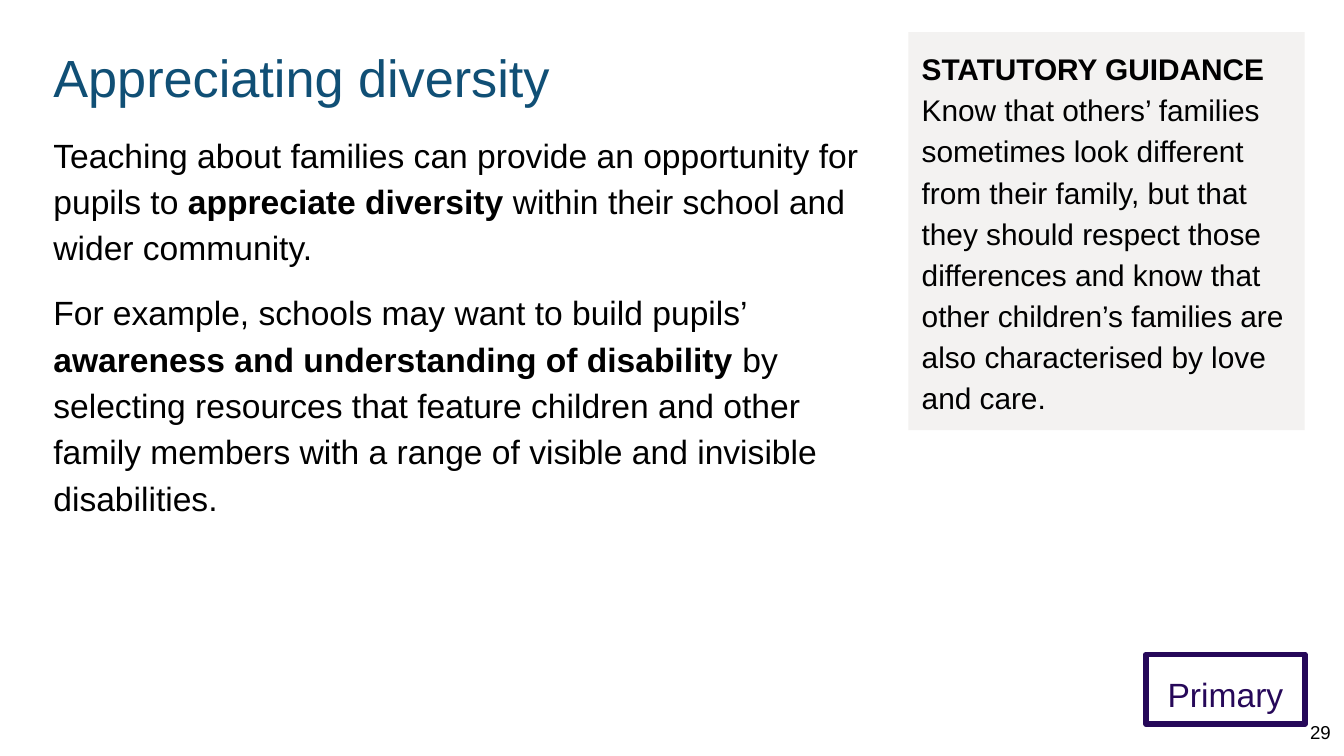
from dataclasses import dataclass
from typing import Optional

import pptx
import pptx.dml.color
import pptx.enum.shapes
import pptx.enum.text
import pptx.util

Cm, Pt = pptx.util.Cm, pptx.util.Pt
ALIGN = pptx.enum.text.PP_ALIGN
ANCHOR = pptx.enum.text.MSO_ANCHOR
RECT = pptx.enum.shapes.MSO_SHAPE.RECTANGLE

# Page grid in cm
LEFT, TOP = 0.76, 0.61
MAIN = 16.28
RIGHT = 24.66
INSET = 0.25
LOOSE = 1.15


@dataclass
class Box:
    area: tuple[float, float, float, float]
    paras: list[list[tuple[str, bool]]]
    size: float
    color: str = "000000"
    lead: float = 1.0
    gap: float = 0
    align: ALIGN = ALIGN.LEFT
    anchor: ANCHOR = ANCHOR.TOP
    fill: Optional[str] = None
    line: Optional[str] = None


def paint(target, code: str) -> None:
    target.rgb = pptx.dml.color.RGBColor.from_string(code)


def apply(target, form: dict) -> None:
    for name, value in form.items():
        setattr(target, name, value)


def write(frame, box: Box) -> None:
    margin = Cm(INSET)
    apply(frame, {"word_wrap": True, "vertical_anchor": box.anchor,
                  "margin_left": margin, "margin_right": margin,
                  "margin_top": margin, "margin_bottom": margin})
    for i, runs in enumerate(box.paras):
        para = frame.add_paragraph() if i else frame.paragraphs[0]
        apply(para, {"alignment": box.align, "line_spacing": box.lead,
                     "space_before": Pt(box.gap if i else 0)})
        for text, bold in runs:
            if text == "\n":
                para.add_line_break()
                continue
            run = para.add_run()
            run.text = text
            apply(run.font, {"name": "Arial", "size": Pt(box.size), "bold": bold})
            paint(run.font.color, box.color)


def draw(slide, box: Box) -> None:
    area = [Cm(n) for n in box.area]
    if box.fill or box.line:
        shape = slide.shapes.add_shape(RECT, *area)
        shape.shadow.inherit = False
        if box.fill:
            shape.fill.solid()
            paint(shape.fill.fore_color, box.fill)
        else:
            shape.fill.background()
        if box.line:
            paint(shape.line.color, box.line)
            shape.line.width = Pt(3)
        else:
            shape.line.fill.background()
    else:
        shape = slide.shapes.add_textbox(*area)
    write(shape.text_frame, box)


# Wording
body = [
    [("Teaching about families can provide an opportunity for pupils to ", False),
     ("appreciate diversity", True),
     (" within their school and wider community.", False)],
    [("For example, schools may want to build pupils’ ", False),
     ("awareness and understanding of disability ", True),
     ("by selecting resources that feature children and other family members "
      "with a range of visible and invisible disabilities.", False)],
]
guide = [
    [("STATUTORY GUIDANCE", True), ("\n", True),
     ("Know that others’ families sometimes look different from their family, "
      "but that they should respect those differences and know that other "
      "children’s families are also characterised by love and care.", False)],
]

boxes = [
    # Title and main text
    Box((LEFT, TOP, MAIN, 1.6), [[("Appreciating diversity", False)]], 28, "104F75"),
    Box((LEFT, 2.18, MAIN, 10.19), body, 18, lead=LOOSE, gap=10),
    # Guidance panel
    Box((RIGHT - 7.49, TOP, 7.49, 7.52), guide, 16, lead=LOOSE, fill="F3F2F1"),
    # Phase label
    Box((RIGHT - 3, 12.37, 3, 1.32), [[("Primary", False)]], 18, "260859",
        lead=LOOSE, align=ALIGN.CENTER, line="260859"),
    # Page number
    Box((24.41, 13.36, 0.99, 0.94), [[("29", False)]], 10,
        align=ALIGN.RIGHT, anchor=ANCHOR.MIDDLE),
]

deck = pptx.Presentation()
apply(deck, {"slide_width": Cm(25.4), "slide_height": Cm(14.29)})
page = deck.slides.add_slide(deck.slide_layouts[6])
for box in boxes:
    draw(page, box)
deck.save("out.pptx")
